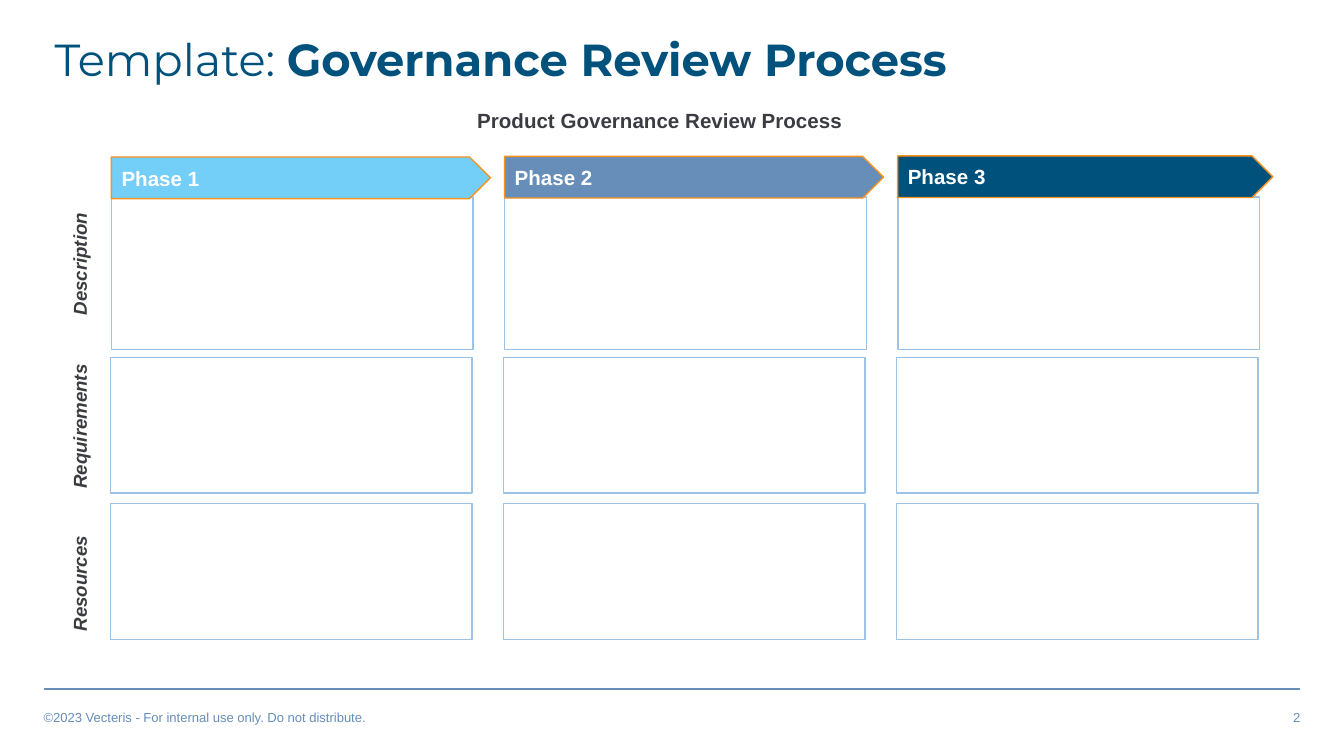
from typing import NamedTuple

from lxml.etree import SubElement
from pptx import Presentation
from pptx.dml.color import RGBColor
from pptx.enum.shapes import MSO_CONNECTOR, MSO_SHAPE
from pptx.enum.text import MSO_ANCHOR as Anchor, PP_ALIGN as Align
from pptx.oxml.ns import qn
from pptx.util import Pt

NAVY = RGBColor(0x00, 0x51, 0x7C)
STEEL = RGBColor(0x66, 0x8E, 0xB9)
SKY = RGBColor(0x73, 0xCF, 0xF8)
ORANGE = RGBColor(0xF6, 0x92, 0x1E)
PALE_BLUE = RGBColor(0x9C, 0xC2, 0xE5)
CHARCOAL = RGBColor(0x3A, 0x3C, 0x41)
WHITE = RGBColor(0xFF, 0xFF, 0xFF)

GRID_LEFT, COLUMN_PITCH, BOX_WIDTH = 59.4, 210.6, 193.7
ARROW_HEIGHT = 22.3
LABEL_CENTER, LABEL_WIDTH, LABEL_HEIGHT = 42.5, 94.3, 17.3


class Phase(NamedTuple):
    name: str
    color: RGBColor
    arrow_top: float
    arrow_width: float


class Row(NamedTuple):
    name: str
    top: float
    height: float
    label_middle: float
    shift: float  # sideways offset from the grid


class Style(NamedTuple):
    size: float
    color: RGBColor
    bold: bool = False
    italic: bool = False
    align: Align = Align.LEFT
    anchor: Anchor = Anchor.TOP


PHASES = [
    Phase("Phase 1", SKY, 84.1, 203),
    Phase("Phase 2", STEEL, 83.8, 203),
    Phase("Phase 3", NAVY, 83.5, 201),
]
ROWS = [
    Row("Description", 105.6, 81.8, 141.5, 0.4),
    Row("Requirements", 191.5, 72.7, 228.5, -0.3),
    Row("Resources", 269.8, 72.7, 312.7, -0.3),
]
FOOTER = Style(7, STEEL)
HEADING = Style(11, CHARCOAL, bold=True, align=Align.CENTER, anchor=Anchor.MIDDLE)
ROW_LABEL = Style(10, CHARCOAL, bold=True, italic=True, align=Align.CENTER)
PHASE_LABEL = Style(11, WHITE, bold=True, anchor=Anchor.MIDDLE)


def set_margins(tf, right: float = 5.4) -> None:
    tf.margin_left, tf.margin_right = Pt(5.4), Pt(right)
    tf.margin_top = tf.margin_bottom = Pt(2.7)
    tf.word_wrap = True


def write(sp, text: str, style: Style, right: float = 5.4) -> None:
    tf = sp.text_frame
    set_margins(tf, right)
    tf.vertical_anchor = style.anchor
    p = tf.paragraphs[0]
    p.text, p.alignment = text, style.align
    p.font.name, p.font.size = "Arial", Pt(style.size)
    p.font.bold, p.font.italic = style.bold, style.italic
    p.font.color.rgb = style.color


def add_text(s, text: str, style: Style, x: float, y: float, w: float, h: float):
    sp = s.shapes.add_textbox(Pt(x), Pt(y), Pt(w), Pt(h))
    write(sp, text, style)
    return sp


def add_box(s, kind: MSO_SHAPE, x: float, y: float, w: float, h: float,
            line: RGBColor, fill: RGBColor | None = None):
    sp = s.shapes.add_shape(kind, Pt(x), Pt(y), Pt(w), Pt(h))
    sp.shadow.inherit = False
    if fill is None:
        sp.fill.background()
    else:
        sp.fill.solid()
        sp.fill.fore_color.rgb = fill
    sp.line.color.rgb, sp.line.width = line, Pt(0.75)
    return sp


def add_title(s) -> None:
    title = s.shapes.title
    title.left, title.top, title.width, title.height = Pt(23.8), Pt(17.3), Pt(525), Pt(41)
    tf = title.text_frame
    set_margins(tf)
    tf.vertical_anchor = Anchor.TOP
    p = tf.paragraphs[0]
    p.alignment, p.line_spacing = Align.LEFT, 0.9
    p.font.name, p.font.size, p.font.color.rgb = "Montserrat", Pt(24), NAVY
    for text, bold in [("Template: ", False), ("Governance Review Process", True)]:
        r = p.add_run()
        r.text, r.font.bold = text, bold


def add_footer(s) -> None:
    rule = s.shapes.add_connector(MSO_CONNECTOR.STRAIGHT, Pt(23.8), Pt(369.2), Pt(696.2), Pt(369.2))
    rule.line.color.rgb, rule.line.width = STEEL, Pt(1)
    SubElement(rule.element.spPr, qn("a:effectLst"))
    add_text(s, "©2023 Vecteris - For internal use only. Do not distribute.",
             FOOTER, 18, 377.3, 288, 13.7)
    add_text(s, "2", FOOTER._replace(align=Align.RIGHT), 414, 377.3, 288, 13.7)


def add_phase(s, phase: Phase, column: int) -> None:
    x = GRID_LEFT + column * COLUMN_PITCH
    fill = WHITE if column == len(PHASES) - 1 else None
    for row in ROWS:
        add_box(s, MSO_SHAPE.RECTANGLE, x + row.shift, row.top, BOX_WIDTH, row.height,
                PALE_BLUE, fill)
    arrow = add_box(s, MSO_SHAPE.PENTAGON, x + 0.3, phase.arrow_top, phase.arrow_width,
                    ARROW_HEIGHT, ORANGE, phase.color)
    write(arrow, phase.name, PHASE_LABEL, right=2.7)


def add_row_label(s, row: Row) -> None:
    sp = add_text(s, row.name, ROW_LABEL, LABEL_CENTER - LABEL_WIDTH / 2,
                  row.label_middle - LABEL_HEIGHT / 2, LABEL_WIDTH, LABEL_HEIGHT)
    sp.rotation = 270


def main() -> None:
    prs = Presentation()
    prs.slide_width, prs.slide_height = Pt(720), Pt(405)
    s = prs.slides.add_slide(prs.slide_layouts[5])

    # Title, heading and footer
    add_title(s)
    add_text(s, "Product Governance Review Process", HEADING, 219.6, 58.5, 267.8, 12.2)
    add_footer(s)

    # Grid of phases and review rows
    for column, phase in enumerate(PHASES):
        add_phase(s, phase, column)
    for row in ROWS:
        add_row_label(s, row)

    prs.save("out.pptx")


if __name__ == "__main__":
    main()
